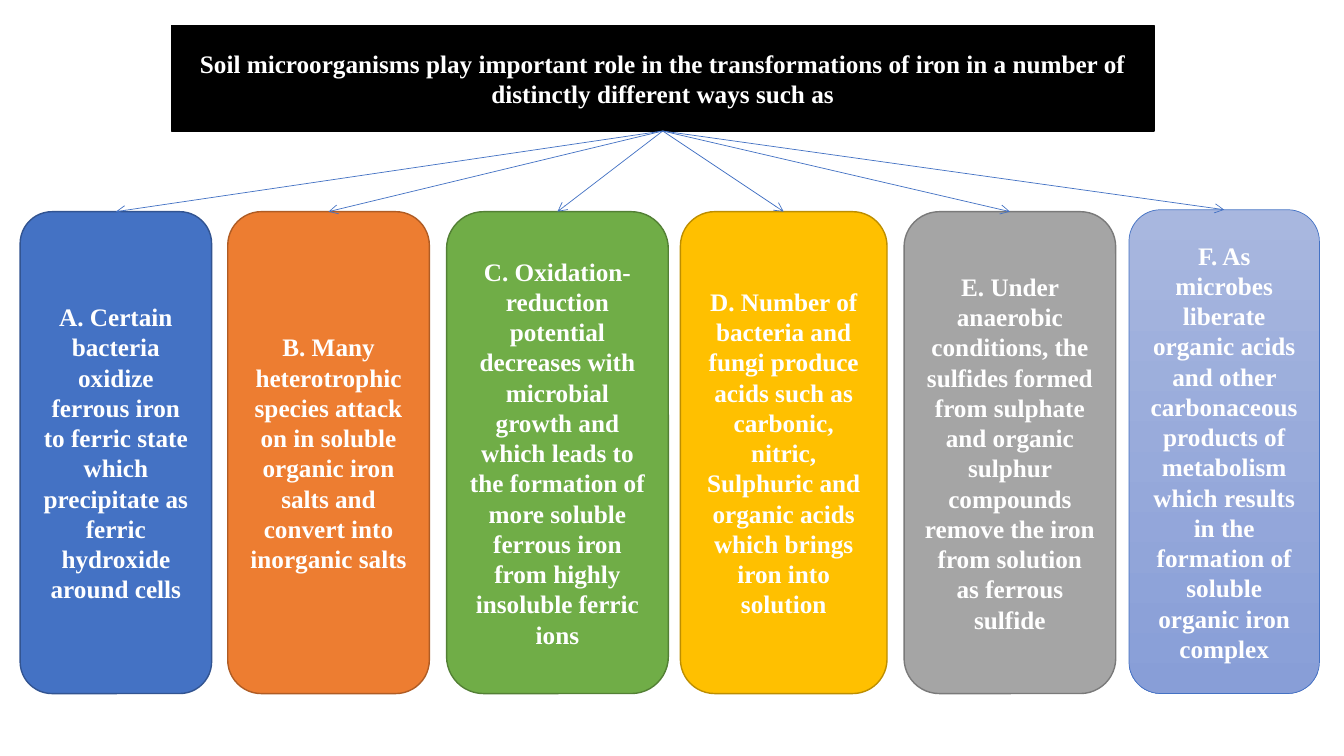
from lxml.etree import SubElement
from pptx import Presentation
from pptx.dml.color import RGBColor
from pptx.enum.shapes import MSO_CONNECTOR, MSO_SHAPE
from pptx.enum.text import MSO_ANCHOR, MSO_AUTO_SIZE, PP_ALIGN
from pptx.oxml.ns import qn
from pptx.util import Pt

TITLE = ("Soil microorganisms play important role in the transformations of iron "
         "in a number of distinctly different ways such as")
BLUE = "4472C4"
TOP, HEIGHT = 151.2, 344.2

# left, top, width, height, fill colours, outline, outline width, wording
WAYS = [
    (14.4, TOP, 136.8, HEIGHT, [BLUE], "325491", 1,
     "A. Certain bacteria oxidize ferrous iron to ferric state which precipitate "
     "as ferric hydroxide around cells"),
    (162.7, TOP, 144, HEIGHT, ["ED7D31"], "AF5C24", 1,
     "B. Many heterotrophic species attack on in soluble organic iron salts and "
     "convert into inorganic salts"),
    (319, TOP, 158.4, HEIGHT, ["70AD47"], "538035", 1,
     "C. Oxidation-reduction potential decreases with microbial growth and which "
     "leads to the formation of more soluble ferrous iron from highly insoluble "
     "ferric ions"),
    (486, TOP, 147.6, HEIGHT, ["FFC000"], "BD8E00", 1,
     "D. Number of bacteria and fungi produce acids such as carbonic, nitric, "
     "Sulphuric and organic acids which brings iron into solution"),
    (645.8, TOP, 151.2, HEIGHT, ["A5A5A5"], "7A7A7A", 1,
     "E. Under anaerobic conditions, the sulfides formed from sulphate and organic "
     "sulphur compounds remove the iron from solution as ferrous sulfide"),
    (806.4, 149.8, 136.1, 345.6, ["A8B7DF", "889ED7"], BLUE, 0.5,
     "F. As microbes liberate organic acids and other carbonaceous products of "
     "metabolism which results in the formation of soluble organic iron complex"),
]


def rgb(value):
    return RGBColor.from_string(value)


def style_outline(line, colour, width):
    line.color.rgb = rgb(colour)
    line.width = Pt(width)


def write_centred(shape, wording):
    frame = shape.text_frame
    frame.text = wording
    frame.word_wrap = True
    frame.auto_size = MSO_AUTO_SIZE.NONE
    frame.vertical_anchor = MSO_ANCHOR.MIDDLE
    paragraph = frame.paragraphs[0]
    paragraph.alignment = PP_ALIGN.CENTER
    font = paragraph.font
    font.name, font.size, font.bold = "Times New Roman", Pt(18), True
    font.color.rgb = rgb("FFFFFF")


def draw_heading(slide, left, top, width, height):
    """Turn the title placeholder into the black oval."""
    heading = slide.shapes.title
    heading.left, heading.top = Pt(left), Pt(top)
    heading.width, heading.height = Pt(width), Pt(height)
    outline = SubElement(heading.element.spPr, qn("a:prstGeom"), prst="ellipse")
    SubElement(outline, qn("a:avLst"))
    heading.fill.solid()
    heading.fill.fore_color.rgb = rgb("000000")
    style_outline(heading.line, "000000", 1)
    write_centred(heading, TITLE)
    return heading


def draw_way(slide, left, top, width, height, colours, edge, edge_width, wording):
    card = slide.shapes.add_shape(MSO_SHAPE.ROUNDED_RECTANGLE, Pt(left), Pt(top),
                                  Pt(width), Pt(height))
    card.shadow.inherit = False
    if len(colours) == 1:
        card.fill.solid()
        card.fill.fore_color.rgb = rgb(colours[0])
    else:
        card.fill.gradient()
        card.fill.gradient_angle = 270
        for stop, colour in zip(card.fill.gradient_stops, colours):
            stop.color.rgb = rgb(colour)
    style_outline(card.line, edge, edge_width)
    write_centred(card, wording)
    return card


def draw_arrow(slide, heading, card):
    """Lead from the foot of the oval to the top of a card."""
    start_x = heading.left + heading.width // 2
    start_y = heading.top + heading.height
    arrow = slide.shapes.add_connector(MSO_CONNECTOR.STRAIGHT, start_x, start_y,
                                       card.left + card.width // 2, card.top)
    arrow.end_connect(card, 0)
    style_outline(arrow.line, BLUE, 0.5)
    SubElement(arrow.line._get_or_add_ln(), qn("a:tailEnd"), type="arrow")
    SubElement(arrow._element.spPr, qn("a:effectLst"))


def main():
    deck = Presentation()
    deck.slide_width, deck.slide_height = Pt(960), Pt(540)
    slide = deck.slides.add_slide(deck.slide_layouts[5])

    # Heading oval
    heading = draw_heading(slide, 122.4, 18, 702, 75.6)

    # Six ways, each with its arrow
    for way in WAYS:
        card = draw_way(slide, *way)
        draw_arrow(slide, heading, card)

    deck.save("out.pptx")


if __name__ == "__main__":
    main()
